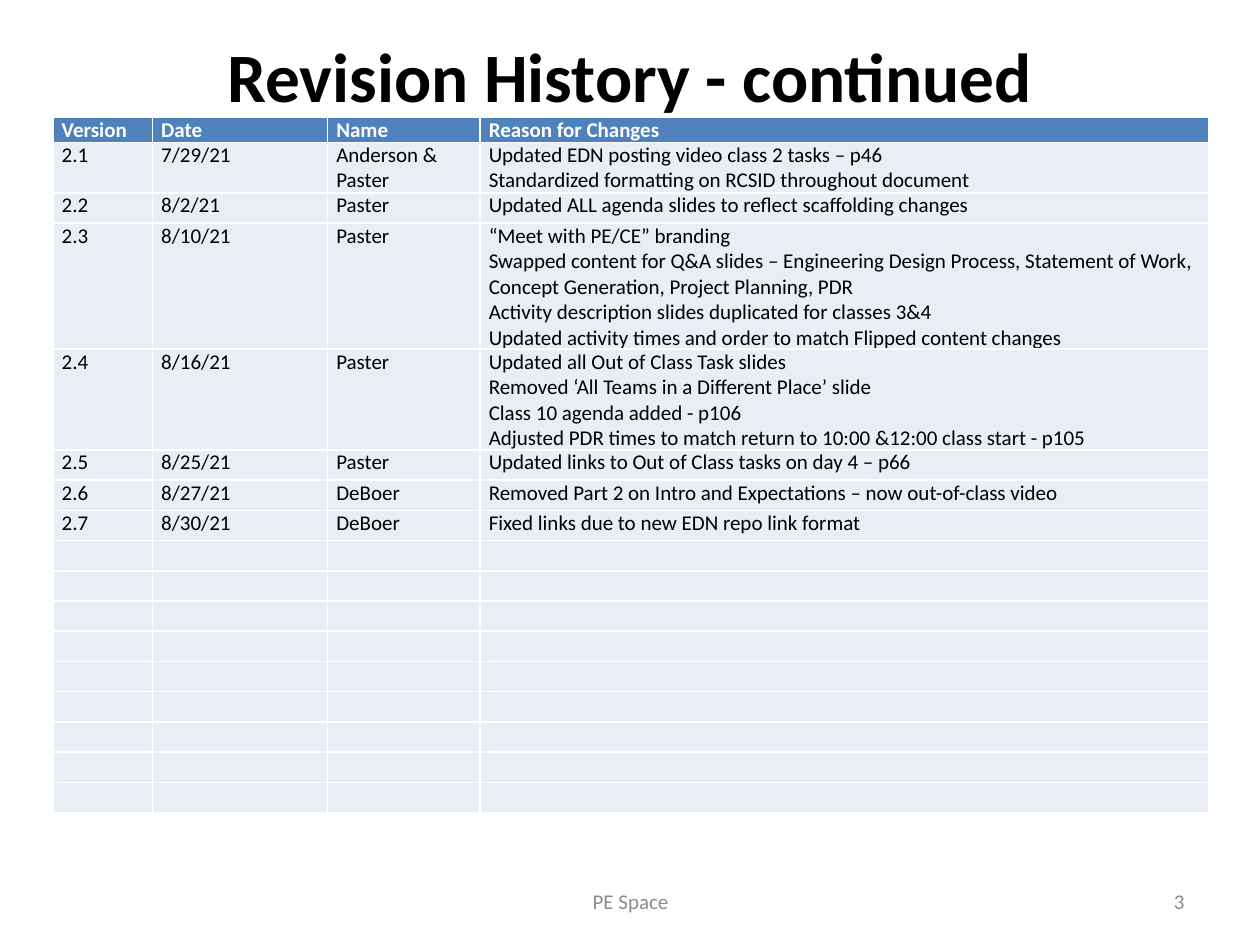
from lxml import etree
from pptx import Presentation
from pptx.dml.color import RGBColor
from pptx.enum.text import MSO_ANCHOR as ANCHOR, PP_ALIGN as ALIGN
from pptx.oxml.ns import qn
from pptx.util import Inches, Pt

COLORS = {"text": "000000", "header_text": "FFFFFF", "header": "4F81BD",
          "body": "E9EDF4", "footer": "8C8C8C"}

HEADERS = ["Version", "Date", "Name", "Reason for Changes"]
REVISIONS = [
    ("2.1", "7/29/21", "Anderson & Paster",
     ["Updated EDN posting video class 2 tasks – p46",
      "Standardized formatting on RCSID throughout document"]),
    ("2.2", "8/2/21", "Paster",
     ["Updated ALL agenda slides to reflect scaffolding changes"]),
    ("2.3", "8/10/21", "Paster",
     ["“Meet with PE/CE” branding",
      "Swapped content for Q&A slides – Engineering Design Process, "
      "Statement of Work, Concept Generation, Project Planning, PDR",
      "Activity description slides duplicated for classes 3&4",
      "Updated activity times and order to match Flipped content changes"]),
    ("2.4", "8/16/21", "Paster",
     ["Updated all Out of Class Task slides",
      "Removed ‘All Teams in a Different Place’ slide",
      "Class 10 agenda added - p106",
      "Adjusted PDR times to match return to 10:00 &12:00 class start - p105"]),
    ("2.5", "8/25/21", "Paster",
     ["Updated links to Out of Class tasks on day 4 – p66"]),
    ("2.6", "8/27/21", "DeBoer",
     ["Removed Part 2 on Intro and Expectations – now out-of-class video"]),
    ("2.7", "8/30/21", "DeBoer",
     ["Fixed links due to new EDN repo link format"]),
]
SPARE_ROWS = 9
COLUMN_WIDTHS = [0.79, 1.39, 1.21, 5.78]
HEADER_HEIGHT, ROW_HEIGHT = 0.2, 0.24


def write(tf, lines, size, color, bold=False, align=None):
    """Put one paragraph per line into a text frame."""
    for i, line in enumerate(lines):
        p = tf.paragraphs[0] if i == 0 else tf.add_paragraph()
        p.alignment = align
        r = p.add_run()
        r.text = line
        for name, value in {"name": "Calibri", "size": Pt(size), "bold": bold}.items():
            setattr(r.font, name, value)
        r.font.color.rgb = RGBColor.from_string(COLORS[color])


def add_text(s, box, text, size, color, bold, align, margins):
    sp = s.shapes.add_textbox(*map(Inches, box))
    tf = sp.text_frame
    tf.word_wrap = True
    tf.vertical_anchor = ANCHOR.MIDDLE
    for name, value in margins.items():
        setattr(tf, name, Inches(value))
    write(tf, [text], size, color, bold, align)


prs = Presentation()
prs.slide_width, prs.slide_height = Inches(10), Inches(7.5)
s = prs.slides.add_slide(prs.slide_layouts[6])

# The bottom margin lifts the title clear of the table
add_text(s, (0.5, 0.3, 9, 1.25), "Revision History - continued", 39.6, "text", True,
         ALIGN.CENTER, {"margin_top": 0, "margin_bottom": 0.66})

rows = [[[h] for h in HEADERS]]
rows += [[[version], [date], [name], reasons] for version, date, name, reasons in REVISIONS]
rows += [[[] for _ in HEADERS] for _ in range(SPARE_ROWS)]

height = HEADER_HEIGHT + ROW_HEIGHT * (len(rows) - 1)
table = s.shapes.add_table(len(rows), len(HEADERS), Inches(0.42), Inches(0.93),
                           Inches(sum(COLUMN_WIDTHS)), Inches(height)).table
table.horz_banding = False
for column, width in zip(table.columns, COLUMN_WIDTHS):
    column.width = Inches(width)

cell_margins = {"margin_left": 0.07, "margin_right": 0.07,
                "margin_top": 0, "margin_bottom": 0}
for i, row in enumerate(rows):
    is_header = i == 0
    table.rows[i].height = Inches(HEADER_HEIGHT if is_header else ROW_HEIGHT)
    for j, lines in enumerate(row):
        cell = table.cell(i, j)
        for name, value in cell_margins.items():
            setattr(cell, name, Inches(value))
        cell.fill.solid()
        cell.fill.fore_color.rgb = RGBColor.from_string(
            COLORS["header" if is_header else "body"])
        write(cell.text_frame, lines, 12, "header_text" if is_header else "text", is_header)
        if not lines:  # keeps spare rows from growing to the default text size
            etree.SubElement(cell.text_frame.paragraphs[0]._p, qn("a:endParaRPr"), sz="1200")

for box, text, align in [((3.42, 6.95, 3.17, 0.4), "PE Space", ALIGN.CENTER),
                         ((7.17, 6.95, 2.33, 0.4), "3", ALIGN.RIGHT)]:
    add_text(s, box, text, 12, "footer", False, align, {})

prs.save("out.pptx")
